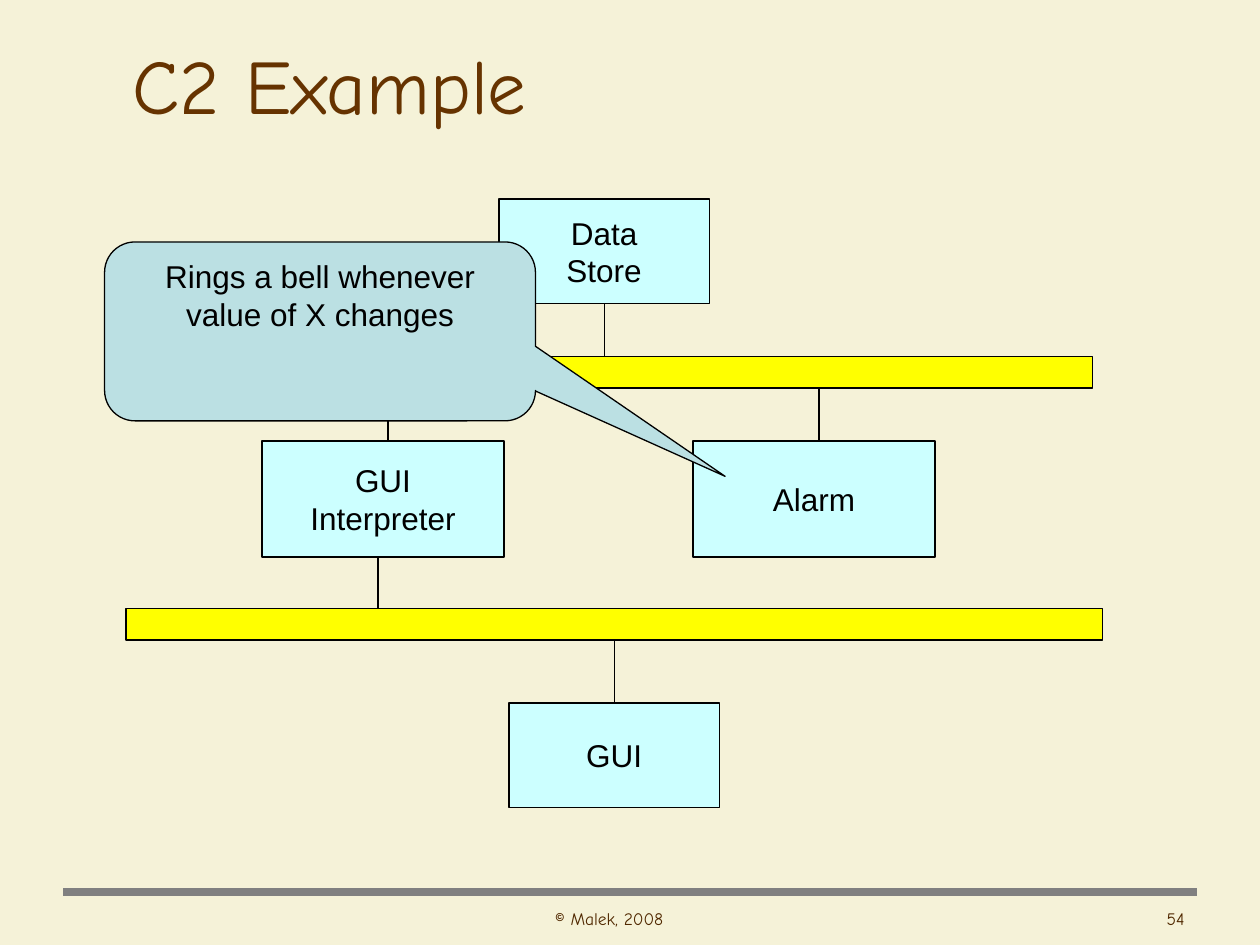
"""Build the C2 architecture example slide."""
from typing import NamedTuple

from pptx import Presentation
from pptx.dml.color import RGBColor
from pptx.enum.shapes import MSO_CONNECTOR as Connector, MSO_SHAPE as Shape
from pptx.enum.text import MSO_ANCHOR as Anchor, PP_ALIGN as Align
from pptx.oxml.ns import qn
from pptx.util import Inches, Pt
from lxml.etree import SubElement

BLACK = "000000"
TOP, BOTTOM = 0, 2


class Box(NamedTuple):
    left: float
    top: float
    width: float
    height: float


class Component(NamedTuple):
    label: str
    box: Box


class Link(NamedTuple):
    x: float
    start_y: float
    end_y: float


COMPONENTS = [
    Component("Data\nStore", Box(3.96, 1.58, 1.67, 0.83)),
    Component("GUI", Box(4.04, 5.58, 1.67, 0.83)),
    Component("GUI\nInterpreter", Box(2.08, 3.5, 1.92, 0.92)),
    Component("Alarm", Box(5.5, 3.5, 1.92, 0.92)),
]
BUSES = [Box(0.92, 2.83, 7.75, 0.25), Box(1, 4.83, 7.75, 0.25)]
LINKS = [Link(3, 4.83, 4.42), Link(3.08, 3.5, 3.08), Link(6.5, 3.5, 3.08)]


def color(hex_code: str) -> RGBColor:
    return RGBColor.from_string(hex_code)


def inches(box: Box) -> list:
    return [Inches(length) for length in box]


def write(frame, text: str, size: float, font: str, hex_code: str, align) -> None:
    frame.text = text
    for paragraph in frame.paragraphs:
        paragraph.alignment = align
        paragraph.font.size = Pt(size)
        paragraph.font.name = font
        paragraph.font.color.rgb = color(hex_code)


def add_block(slide, box: Box, fill: str, kind=Shape.RECTANGLE):
    block = slide.shapes.add_shape(kind, *inches(box))
    block.shadow.inherit = False
    block.fill.solid()
    block.fill.fore_color.rgb = color(fill)
    block.line.color.rgb = color(BLACK)
    block.line.width = Pt(0.75)
    return block


def add_component(slide, component: Component):
    block = add_block(slide, component.box, "CCFFFF")
    block.text_frame.word_wrap = False
    block.text_frame.vertical_anchor = Anchor.MIDDLE
    write(block.text_frame, component.label, 18, "Arial", BLACK, Align.CENTER)
    return block


def add_line(slide, x1: float, y1: float, x2: float, y2: float,
             hex_code: str = BLACK, width: float = 0.75):
    line = slide.shapes.add_connector(
        Connector.STRAIGHT, Inches(x1), Inches(y1), Inches(x2), Inches(y2))
    line.line.color.rgb = color(hex_code)
    line.line.width = Pt(width)
    SubElement(line._element.spPr, qn("a:effectLst"))
    return line


def join(slide, upper, lower) -> None:
    line = add_line(slide, 0, 0, 0, 0)
    line.begin_connect(upper, BOTTOM)
    line.end_connect(lower, TOP)


def add_footer(slide, text: str, box: Box, align) -> None:
    frame = slide.shapes.add_textbox(*inches(box)).text_frame
    frame.word_wrap = True
    write(frame, text, 10, "Comic Neue", "502800", align)


def add_title(slide, text: str) -> None:
    title = slide.shapes.title
    title.left, title.top, title.width, title.height = inches(Box(0.95, 0.25, 8.93, 0.83))
    title.text_frame.vertical_anchor = Anchor.MIDDLE
    write(title.text_frame, text, 44, "Comic Neue", "663300", Align.LEFT)


def add_callout(slide, text: str) -> None:
    callout = add_block(slide, Box(0.83, 1.92, 3.42, 1.42), "BBE0E3",
                        Shape.ROUNDED_RECTANGULAR_CALLOUT)
    for index, value in enumerate((0.94, 0.81, 0.17)):
        callout.adjustments[index] = value
    callout.text_frame.word_wrap = True
    callout.text_frame.vertical_anchor = Anchor.TOP
    write(callout.text_frame, text, 18, "Arial", BLACK, Align.CENTER)


def main() -> None:
    deck = Presentation()
    deck.slide_width, deck.slide_height = Inches(10), Inches(7.5)
    slide = deck.slides.add_slide(deck.slide_layouts[5])
    slide.background.fill.solid()
    slide.background.fill.fore_color.rgb = color("F5F2D8")

    add_line(slide, 0.5, 7.08, 9.5, 7.08, "808080", 4.5)
    add_title(slide, "C2 Example")
    data_store, gui, *_ = [add_component(slide, component) for component in COMPONENTS]
    upper_bus, lower_bus = [add_block(slide, box, "FFFF00") for box in BUSES]
    join(slide, lower_bus, gui)
    for link in LINKS:
        add_line(slide, link.x, link.start_y, link.x, link.end_y)
    join(slide, data_store, upper_bus)
    add_callout(slide, "Rings a bell whenever value of X changes")
    add_footer(slide, "© Malek, 2008", Box(3.67, 7.16, 2.33, 0.33), Align.CENTER)
    add_footer(slide, "54", Box(6, 7.16, 3.5, 0.33), Align.RIGHT)

    deck.save("out.pptx")


if __name__ == "__main__":
    main()
